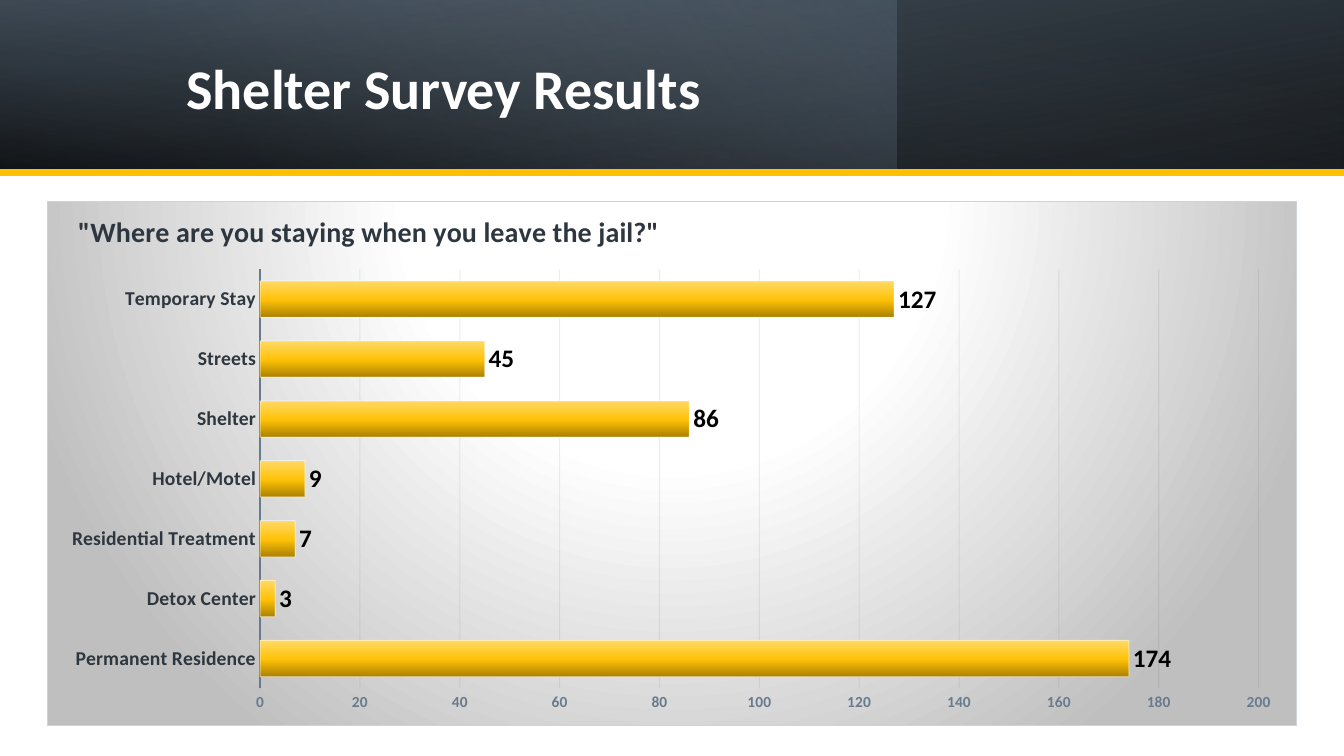
from pptx import Presentation
from pptx.chart.data import CategoryChartData
from pptx.dml.color import RGBColor
from pptx.enum.chart import XL_CHART_TYPE, XL_LABEL_POSITION as LABEL, XL_TICK_MARK as TICK
from pptx.enum.shapes import MSO_CONNECTOR, MSO_SHAPE
from pptx.enum.text import MSO_ANCHOR, PP_ALIGN
from pptx.oxml import parse_xml
from pptx.oxml.ns import nsdecls, qn
from pptx.util import Inches, Pt

LINEAR = '<a:lin ang="{}" scaled="0"/>'
CIRCLE = '<a:path path="circle"><a:fillToRect l="50000" t="-80000" r="50000" b="180000"/></a:path>'


def set_gradient(properties, stops, direction):
    """Replace the empty fill with a gradient of (position, colour, opacity) stops in percent."""
    stop_xml = "".join(
        f'<a:gs pos="{position * 1000}"><a:srgbClr val="{colour}">'
        f'<a:alpha val="{opacity * 1000}"/></a:srgbClr></a:gs>'
        for position, colour, opacity in stops)
    gradient = parse_xml(f'<a:gradFill {nsdecls("a")} rotWithShape="1">'
                         f'<a:gsLst>{stop_xml}</a:gsLst>{direction}</a:gradFill>')
    properties.replace(properties.find(qn("a:noFill")), gradient)


def set_font(font, size, colour):
    values = {"name": "Calibri", "size": Pt(size), "bold": True}
    for name, value in values.items():
        setattr(font, name, value)
    font.color.rgb = RGBColor.from_string(colour)


presentation = Presentation()
presentation.slide_width = Inches(13.33)
presentation.slide_height = Inches(7.5)
slide = presentation.slides.add_slide(presentation.slide_layouts[5])

# Header: three layered gradients
header_layers = [
    (13.33, 180, True, 100, [(0, "000000", 96), (100, "45525E", 100)]),
    (8.89, 0, False, 140, [(0, "5C6D7E", 41), (74, "9AA7B5", 0)]),
    (13.33, 0, True, 260, [(0, "000000", 63), (78, "5C6D7E", 15)]),
]
for width, rotation, flipped, angle, stops in header_layers:
    layer = slide.shapes.add_shape(MSO_SHAPE.RECTANGLE, 0, 0, Inches(width), Inches(1.72))
    layer.shadow.inherit = False
    layer.rotation = rotation
    layer.line.fill.background()
    layer.fill.background()
    properties = layer.element.spPr
    if flipped:
        properties.find(qn("a:xfrm")).set("flipH", "1")
    set_gradient(properties, stops, LINEAR.format(angle * 60000))

title = slide.shapes.title
title.left, title.top, title.width, title.height = map(Inches, (1.75, 0.27, 7.72, 1.27))
title.text_frame.text = "Shelter Survey Results"
title.text_frame.vertical_anchor = MSO_ANCHOR.MIDDLE
title_paragraph = title.text_frame.paragraphs[0]
title_paragraph.alignment = PP_ALIGN.LEFT
title_paragraph.line_spacing = 0.9
set_font(title_paragraph.runs[0].font, 40, "FFFFFF")
slide.shapes.element.append(title.element)

# Survey chart, categories from bottom to top
answers = {
    "Permanent Residence": 174,
    "Detox Center": 3,
    "Residential Treatment": 7,
    "Hotel/Motel": 9,
    "Shelter": 86,
    "Streets": 45,
    "Temporary Stay": 127,
}
chart_data = CategoryChartData()
chart_data.categories = list(answers)
chart_data.add_series("Series 1", list(answers.values()))
chart = slide.shapes.add_chart(
    XL_CHART_TYPE.BAR_CLUSTERED, Inches(0.47), Inches(1.99), Inches(12.39), Inches(5.21),
    chart_data).chart
chart.has_legend = False
chart.font.name = "Calibri"
chart.font.size = Pt(10)
chart.font.color.rgb = RGBColor.from_string("434F5B")
chart.has_title = True
question = chart.chart_title.text_frame
question.text = '"Where are you staying when you leave the jail?"'
set_font(question.paragraphs[0].runs[0].font, 20, "2E363F")

category_axis, value_axis = chart.category_axis, chart.value_axis
for axis, size, colour in ((category_axis, 14, "2E363F"), (value_axis, 11, "687B8E")):
    axis.major_tick_mark = axis.minor_tick_mark = TICK.NONE
    set_font(axis.tick_labels.font, size, colour)
category_axis.format.line.color.rgb = RGBColor.from_string("687B8E")
category_axis.format.line.width = Pt(1.5)
value_axis.format.line.fill.background()
value_axis.minimum_scale, value_axis.maximum_scale, value_axis.major_unit = 0, 200, 20
grid_line = value_axis.major_gridlines.format.line
grid_line.color.rgb = RGBColor.from_string("4A5865")
grid_line.width = Pt(0.75)

plot = chart.plots[0]
plot.gap_width = 65
plot.vary_by_categories = False
plot.has_data_labels = True
plot.data_labels.show_value = True
plot.data_labels.position = LABEL.OUTSIDE_END
set_font(plot.data_labels.font, 18, "000000")
bars = plot.series[0].format
bars.fill.background()
bars.line.color.rgb = RGBColor.from_string("FFFFFF")
bars.line.width = Pt(0.75)

chart_space = chart.element
set_gradient(chart_space.xpath(".//c:ser/c:spPr")[0],
             [(0, "AB8100", 100), (48, "FFC208", 100), (100, "FFD966", 100)],
             LINEAR.format(270 * 60000))
for line_path, opacity in ((".//c:majorGridlines", 10), (".//c:ser", 50)):
    line_colour = chart_space.xpath(f"{line_path}/c:spPr/a:ln//a:srgbClr")[0]
    line_colour.append(parse_xml(f'<a:alpha {nsdecls("a")} val="{opacity * 1000}"/>'))

chart_area = parse_xml(
    f'<c:spPr {nsdecls("c", "a")}><a:noFill/><a:ln w="{Pt(0.75)}"><a:solidFill>'
    '<a:srgbClr val="CCD3DA"/></a:solidFill></a:ln></c:spPr>')
set_gradient(chart_area, [(0, "FFFFFF", 100), (39, "FFFFFF", 100), (100, "BFBFBF", 100)], CIRCLE)
chart_space.find(qn("c:chart")).addnext(chart_area)

# Manual places as fractions of the chart
layouts = [
    (".//c:plotArea", 0, '<c:layoutTarget val="inner"/>', {"x": 0.17, "y": 0.13, "w": 0.8, "h": 0.8}),
    (".//c:chart/c:title", 1, "", {"x": 0.02, "y": 0.01}),
]
for parent_path, index, target, places in layouts:
    parent = chart_space.xpath(parent_path)[0]
    for old_layout in parent.findall(qn("c:layout")):
        parent.remove(old_layout)
    modes = "".join(f'<c:{name}Mode val="edge"/>' for name in "xy")
    values = "".join(f'<c:{name} val="{value}"/>' for name, value in places.items())
    parent.insert(index, parse_xml(
        f'<c:layout {nsdecls("c")}><c:manualLayout>{target}{modes}{values}'
        '</c:manualLayout></c:layout>'))

header_rule = slide.shapes.add_connector(
    MSO_CONNECTOR.STRAIGHT, 0, Inches(1.71), Inches(13.33), Inches(1.71))
header_rule.line.color.rgb = RGBColor.from_string("FFC000")
header_rule.line.width = Pt(4.5)
header_rule.element.spPr.append(parse_xml(f'<a:effectLst {nsdecls("a")}/>'))

presentation.save("out.pptx")
